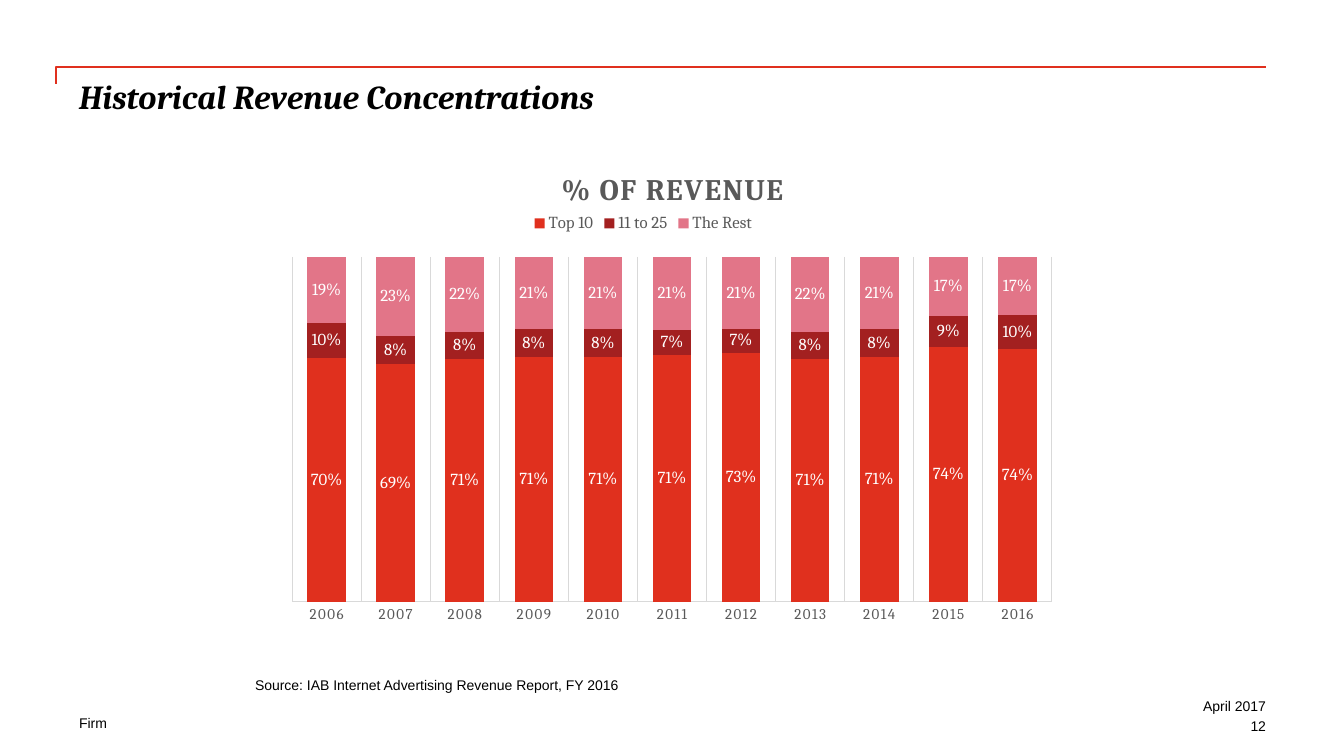
from lxml.etree import SubElement
from pptx import Presentation
from pptx.chart.data import CategoryChartData
from pptx.dml.color import RGBColor
from pptx.enum.chart import XL_CHART_TYPE, XL_LABEL_POSITION, XL_LEGEND_POSITION, XL_TICK_MARK
from pptx.enum.text import MSO_ANCHOR, PP_ALIGN
from pptx.oxml.ns import qn
from pptx.util import Pt

RED = RGBColor(0xE0, 0x30, 0x1E)
DARK = RGBColor(0xA3, 0x20, 0x20)
ROSE = RGBColor(0xE2, 0x75, 0x88)
GRAY = RGBColor(0x59, 0x59, 0x59)
PALE = RGBColor(0xD9, 0xD9, 0xD9)
BLACK = RGBColor(0, 0, 0)
WHITE = RGBColor(255, 255, 255)
SERIF, SANS = "Cambria", "Arial"

# Content: text, box in px, font, size, heavy, align, anchor
LEFT, RIGHT = PP_ALIGN.LEFT, PP_ALIGN.RIGHT
TOP, BOTTOM = MSO_ANCHOR.TOP, MSO_ANCHOR.BOTTOM
TEXTS = [
    ("Historical Revenue Concentrations", (79, 76, 1187, 101), SERIF, 24, True, LEFT, TOP),
    ("Source: IAB Internet Advertising Revenue Report, FY 2016",
     (255, 676, 580, 17), SANS, 10, False, LEFT, BOTTOM),
    ("Firm", (79, 715, 381, 17), SANS, 10, False, LEFT, TOP),
    ("April 2017", (1042, 698, 224, 17), SANS, 10, False, RIGHT, TOP),
    ("12", (1041, 718, 225, 17), SANS, 10, False, RIGHT, TOP),
]
RULE = [(56, 84), (56, 67), (1266, 67)]
HEAD = "% OF REVENUE"
YEARS = [str(year) for year in range(2006, 2017)]
SHARES = [  # name, percent by year, colour
    ("Top 10", (70, 69, 71, 71, 71, 71, 73, 71, 71, 74, 74), RED),
    ("11 to 25", (10, 8, 8, 8, 8, 7, 7, 8, 8, 9, 10), DARK),
    ("The Rest", (19, 23, 22, 21, 21, 21, 21, 22, 21, 17, 17), ROSE),
]
FRAME = (275, 154, 792, 480)
PLOT = (292, 257, 760, 345)
KEY = (529, 210)
HEADING = (556, 165)
SPREAD = "120"

SCALE = 914400 / 100.8


def px(*nums):
    return [round(num * SCALE) for num in nums]


def style(font, name, size, color, bold=False):
    font.name, font.size, font.bold = name, Pt(size), bold
    font.color.rgb = color


def place(parent, after, box, inner=False):
    """Pin a chart part to a box given in slide px."""
    for old in parent.findall(qn("c:layout")):
        parent.remove(old)
    layout = parent.makeelement(qn("c:layout"))
    manual = SubElement(layout, qn("c:manualLayout"))
    if inner:
        SubElement(manual, qn("c:layoutTarget")).set("val", "inner")
    for mode in ("xMode", "yMode"):
        SubElement(manual, qn("c:" + mode)).set("val", "edge")
    x, y, wide, high = FRAME
    parts = [(box[0] - x) / wide, (box[1] - y) / high]
    if len(box) > 2:
        parts += [box[2] / wide, box[3] / high]
    for tag, part in zip("xywh", parts):
        SubElement(manual, qn("c:" + tag)).set("val", f"{part:.4f}")
    spot = parent.find(qn(after)) if after else parent[0]
    spot.addprevious(layout)


deck = Presentation()
deck.slide_width, deck.slide_height = px(1344, 756)
slide = deck.slides.add_slide(deck.slide_layouts[6])
shapes = slide.shapes

# Corner rule
pen = shapes.build_freeform(*RULE[0], scale=SCALE)
pen.add_line_segments(RULE[1:], close=False)
rule = pen.convert_to_shape()
rule.shadow.inherit = False
rule.fill.background()
rule.line.color.rgb = RED
rule.line.width = Pt(1)

# Texts
for text, box, name, size, heavy, align, anchor in TEXTS:
    frame = shapes.add_textbox(*px(*box)).text_frame
    frame.word_wrap = True
    frame.vertical_anchor = anchor
    frame.margin_left = frame.margin_right = frame.margin_top = frame.margin_bottom = 0
    para = frame.paragraphs[0]
    para.alignment = align
    run = para.add_run()
    run.text = text
    style(run.font, name, size, BLACK, heavy)
    run.font.italic = heavy

# Chart
data = CategoryChartData(number_format="0%")
data.categories = YEARS
for name, shares, color in SHARES:
    data.add_series(name, [share / 100 for share in shares])
chart = shapes.add_chart(XL_CHART_TYPE.COLUMN_STACKED_100, *px(*FRAME), data).chart
style(chart.font, SANS, 10, BLACK)
plot = chart.plots[0]
plot.vary_by_categories = False
plot.gap_width, plot.overlap = 79, 100
for series, (name, shares, color) in zip(plot.series, SHARES):
    series.format.fill.solid()
    series.format.fill.fore_color.rgb = color
    labels = series.data_labels
    labels.show_value = True
    labels.number_format, labels.number_format_is_linked = "0%", False
    labels.position = XL_LABEL_POSITION.CENTER
    style(labels.font, SERIF, 12, WHITE)

# Axes
years = chart.category_axis
years.major_tick_mark = years.minor_tick_mark = XL_TICK_MARK.NONE
years.has_major_gridlines = True
for line in (years.format.line, years.major_gridlines.format.line):
    line.color.rgb = PALE
    line.width = Pt(0.75)
style(years.tick_labels.font, SERIF, 10.64, GRAY)
chart.value_axis.has_major_gridlines = False
chart.value_axis.visible = False

# Heading and legend
chart.has_title = True
run = chart.chart_title.text_frame.paragraphs[0].add_run()
run.text = HEAD
style(run.font, SERIF, 21.3, GRAY, True)
chart.has_legend = True
legend = chart.legend
legend.position = XL_LEGEND_POSITION.TOP
legend.include_in_layout = False
style(legend.font, SERIF, 12, GRAY)

# Letter spacing and layout
for props in chart.element.xpath(".//c:catAx/c:txPr//a:defRPr | .//c:title//a:r/a:rPr"):
    props.set("spc", SPREAD)
body = chart.element.find(qn("c:chart"))
place(body.find(qn("c:title")), "c:overlay", HEADING)
place(body.find(qn("c:legend")), "c:overlay", KEY)
place(body.find(qn("c:plotArea")), None, PLOT, inner=True)

deck.save("out.pptx")
